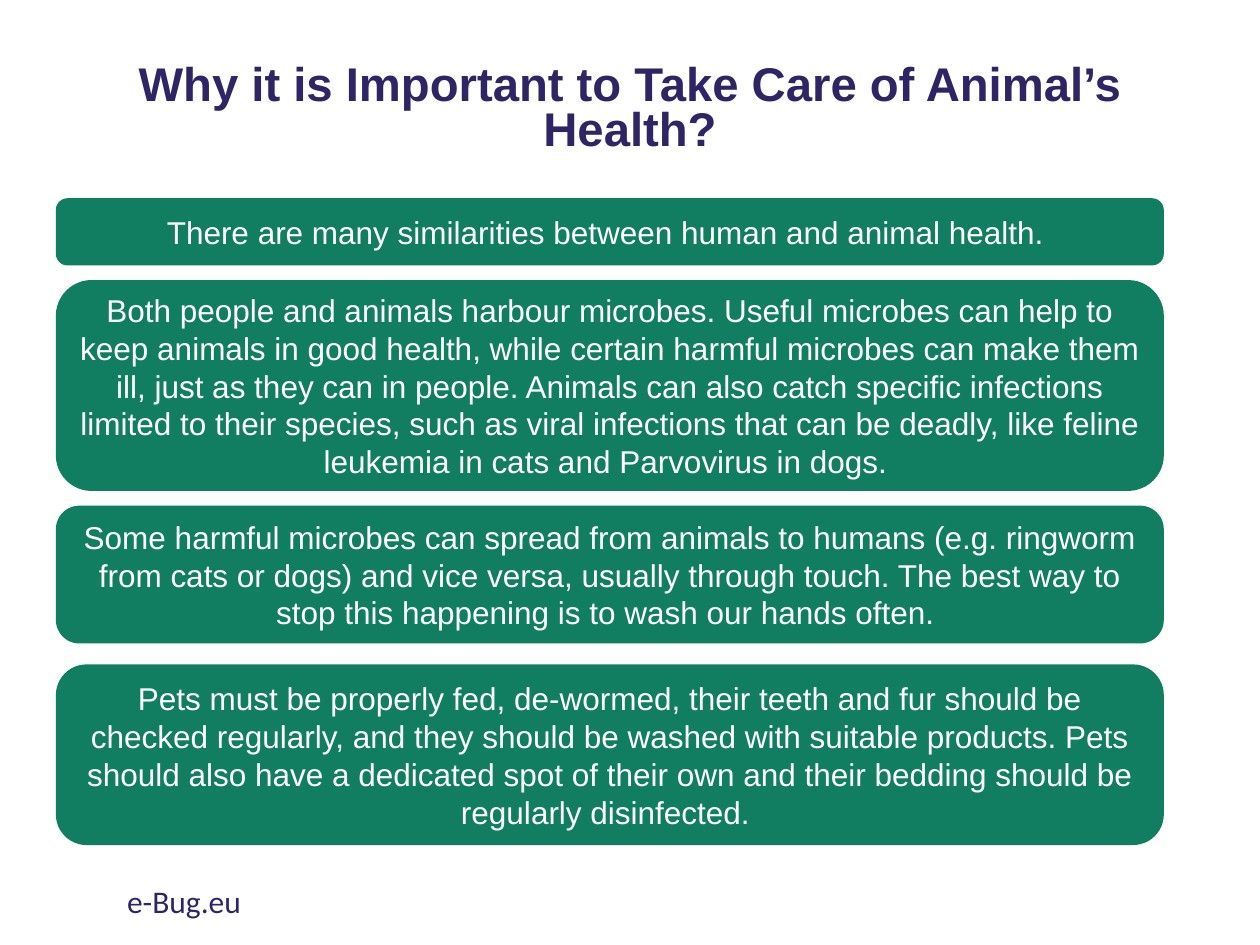
from pptx import Presentation
from pptx.dml.color import RGBColor
from pptx.enum.shapes import MSO_SHAPE
from pptx.enum.text import MSO_ANCHOR, PP_ALIGN
from pptx.util import Inches, Pt

COLORS = {"navy": "302564", "green": "117E62", "white": "FFFFFF"}

CARDS = [
    (1.58, 0.52, "There are many similarities between human and animal health. "),
    (2.23, 1.66, "Both people and animals harbour microbes. Useful microbes can help to keep "
                 "animals in good health, while certain harmful microbes can make them ill, "
                 "just as they can in people. Animals can also catch specific infections "
                 "limited to their species, such as viral infections that can be deadly, "
                 "like feline leukemia in cats and Parvovirus in dogs. "),
    (4.02, 1.08, "Some harmful microbes can spread from animals to humans (e.g. ringworm from "
                 "cats or dogs) and vice versa, usually through touch. The best way to stop "
                 "this happening is to wash our hands often. "),
    (5.28, 1.42, "Pets must be properly fed, de-wormed, their teeth and fur should be checked "
                 "regularly, and they should be washed with suitable products. Pets should "
                 "also have a dedicated spot of their own and their bedding should be "
                 "regularly disinfected. "),
]


def rgb(name):
    return RGBColor.from_string(COLORS[name])


def write(s, text, size, color, font="Arial", bold=False,
          align=PP_ALIGN.CENTER, anchor=MSO_ANCHOR.MIDDLE, spacing=None):
    tf = s.text_frame
    tf.word_wrap = True
    tf.vertical_anchor = anchor
    p = tf.paragraphs[0]
    p.alignment = align
    p.line_spacing = spacing
    r = p.add_run()
    r.text = text
    r.font.name = font
    r.font.size = Pt(size)
    r.font.bold = bold
    r.font.color.rgb = rgb(color)


def add_text(slide, left, top, width, height, text, size, **style):
    s = slide.shapes.add_textbox(Inches(left), Inches(top), Inches(width), Inches(height))
    write(s, text, size, "navy", **style)


def add_card(slide, top, height, text):
    s = slide.shapes.add_shape(MSO_SHAPE.ROUNDED_RECTANGLE, Inches(0.45), Inches(top),
                               Inches(8.78), Inches(height))
    s.shadow.inherit = False
    s.fill.solid()
    s.fill.fore_color.rgb = rgb("green")
    s.line.color.rgb = rgb("green")
    s.line.width = Pt(1)
    write(s, text, 18, "white")


def main():
    """Build the slide on caring for animal health."""
    prs = Presentation()
    prs.slide_width, prs.slide_height = Inches(10), Inches(7.5)
    slide = prs.slides.add_slide(prs.slide_layouts[6])
    add_text(slide, 0.69, 0.42, 8.62, 0.91,
             "Why it is Important to Take Care of Animal’s Health?", 27,
             bold=True, spacing=0.8)
    for top, height, text in CARDS:
        add_card(slide, top, height, text)
    add_text(slide, 0.91, 6.95, 3.38, 0.4, "e-Bug.eu", 18, font="Calibri",
             align=PP_ALIGN.LEFT, anchor=MSO_ANCHOR.TOP)
    prs.save("out.pptx")


if __name__ == "__main__":
    main()
